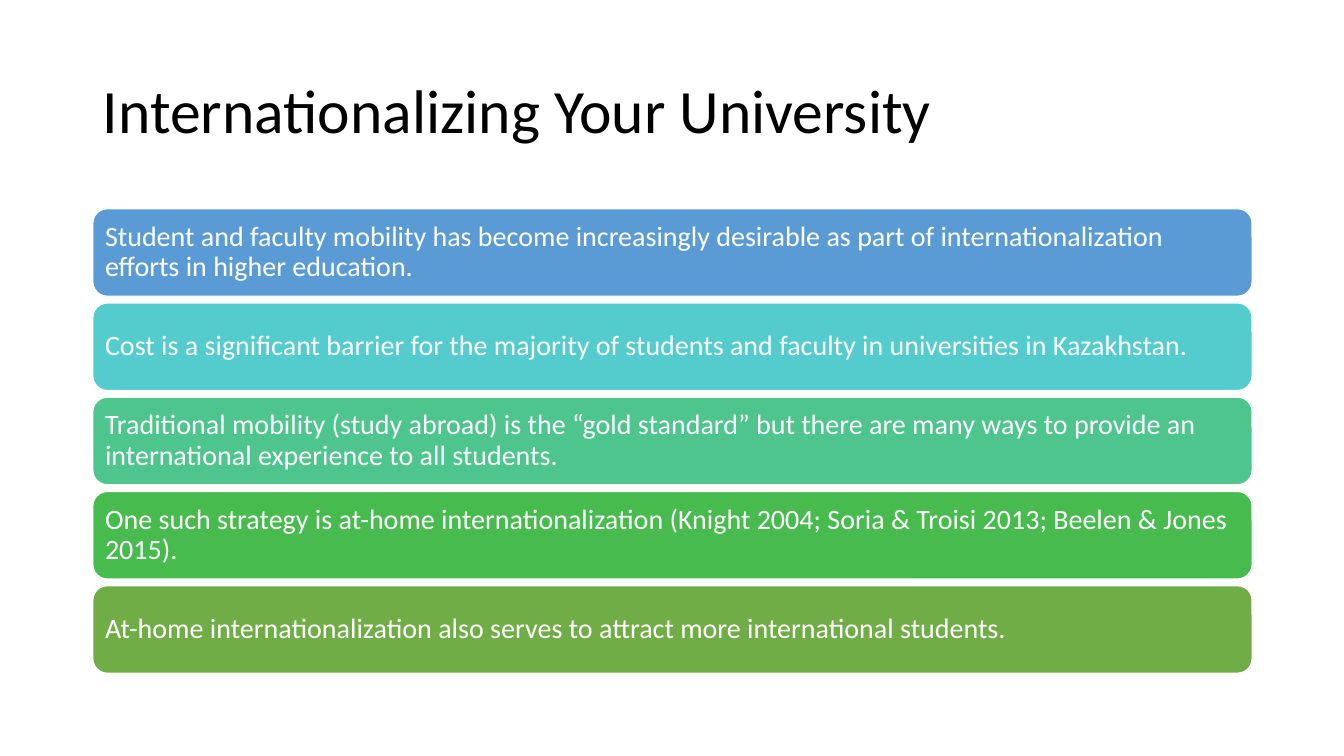
"""Build the slide on internationalizing a university."""
from pptx import Presentation
from pptx.dml.color import RGBColor
from pptx.enum import shapes, text
from pptx.util import Inches, Pt

COLORS = {
    "black": "000000",
    "white": "FFFFFF",
    "blue": "5B9BD5",
    "turquoise": "54CCCD",
    "mint": "4DC58D",
    "green": "48BB4F",
    "olive": "70AD47",
}
STATEMENTS = [
    ("blue", "Student and faculty mobility has become increasingly desirable as part of "
             "internationalization efforts in higher education."),
    ("turquoise", "Cost is a significant barrier for the majority of students and faculty "
                  "in universities in Kazakhstan."),
    ("mint", "Traditional mobility (study abroad) is the “gold standard” but there are many "
             "ways to provide an international experience to all students."),
    ("green", "One such strategy is at-home internationalization (Knight 2004; "
              "Soria & Troisi 2013; Beelen & Jones 2015)."),
    ("olive", "At-home internationalization also serves to attract more international students."),
]
LEFT, WIDTH = 0.92, 11.5
BAR_TOP, BAR_HEIGHT, BAR_GAP = 2.07, 0.87, 0.065


def add_line(frame, wording, size, color):
    """Write one left-aligned line of text, centred vertically in its frame."""
    frame.word_wrap = True
    frame.auto_size = text.MSO_AUTO_SIZE.NONE
    frame.vertical_anchor = text.MSO_ANCHOR.MIDDLE
    paragraph = frame.paragraphs[0]
    paragraph.alignment = text.PP_ALIGN.LEFT
    paragraph.line_spacing = 0.9
    run = paragraph.add_run()
    run.text = wording
    run.font.name = "Calibri"
    run.font.size = Pt(size)
    run.font.color.rgb = RGBColor.from_string(COLORS[color])


presentation = Presentation()
presentation.slide_width = Inches(13.33)
presentation.slide_height = Inches(7.5)
slide = presentation.slides.add_slide(presentation.slide_layouts[5])

title = slide.shapes.title
title.left, title.top = Inches(LEFT), Inches(0.4)
title.width, title.height = Inches(WIDTH), Inches(1.45)
add_line(title.text_frame, "Internationalizing Your University", 44, "black")

for index, (color, statement) in enumerate(STATEMENTS):
    top = BAR_TOP + index * (BAR_HEIGHT + BAR_GAP)
    bar = slide.shapes.add_shape(
        shapes.MSO_SHAPE.ROUNDED_RECTANGLE,
        Inches(LEFT), Inches(top), Inches(WIDTH), Inches(BAR_HEIGHT))
    bar.shadow.inherit = False
    bar.fill.solid()
    bar.fill.fore_color.rgb = RGBColor.from_string(COLORS[color])
    bar.line.color.rgb = RGBColor.from_string(COLORS["white"])
    bar.line.width = Pt(1)
    frame = bar.text_frame
    frame.margin_left = frame.margin_right = Inches(0.08)
    frame.margin_top = frame.margin_bottom = Inches(0.08)
    add_line(frame, statement, 20, "white")

presentation.save("out.pptx")
